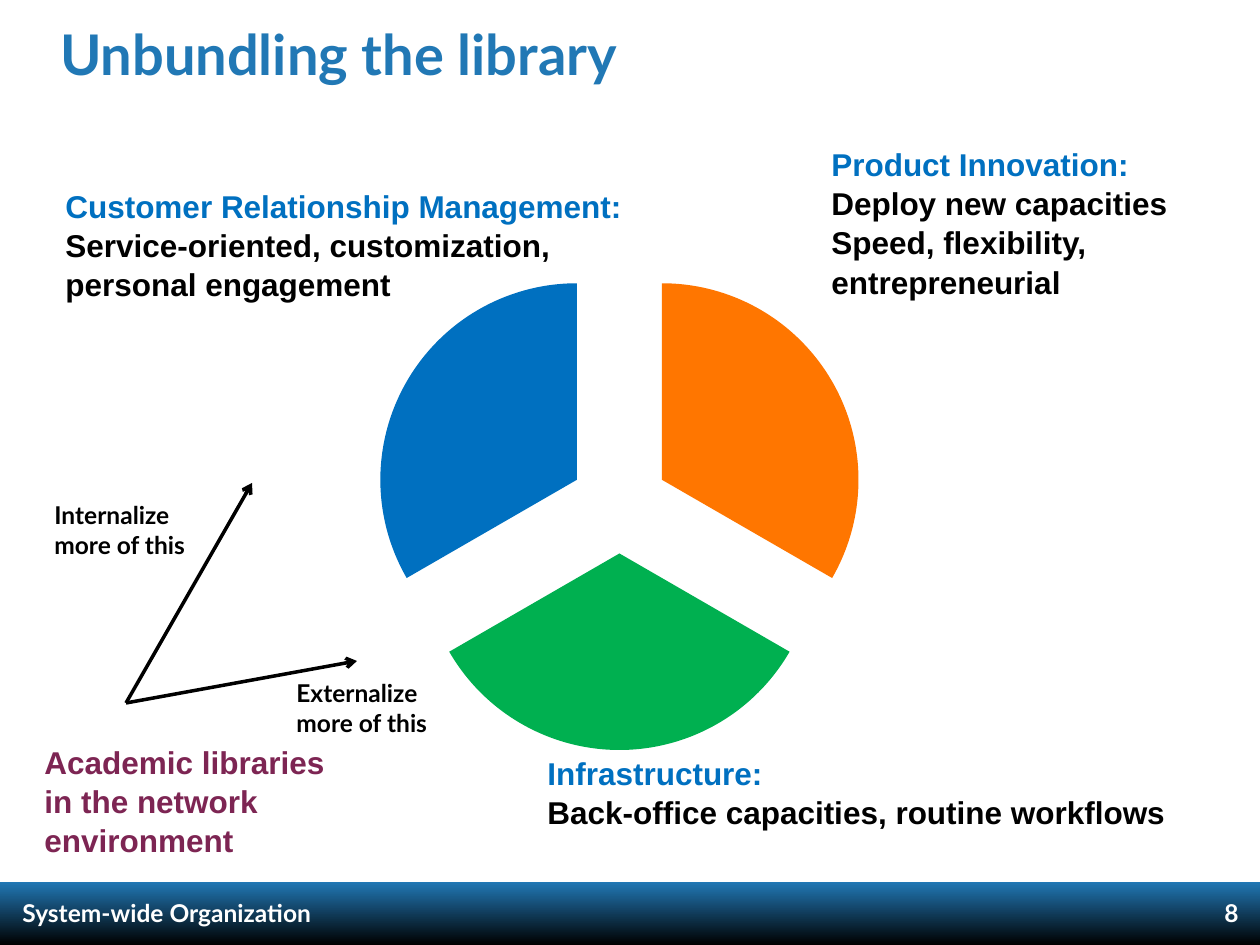
from lxml import etree
from pptx import Presentation
from pptx.chart.data import CategoryChartData
from pptx.dml.color import RGBColor
from pptx.enum.chart import XL_CHART_TYPE
from pptx.enum.shapes import MSO_CONNECTOR, MSO_SHAPE
from pptx.enum.text import PP_ALIGN
from pptx.oxml import parse_xml
from pptx.oxml.ns import nsdecls, qn
from pptx.util import Pt

PIE = XL_CHART_TYPE.PIE
STRAIGHT = MSO_CONNECTOR.STRAIGHT
RECTANGLE = MSO_SHAPE.RECTANGLE
LEFT, RIGHT = PP_ALIGN.LEFT, PP_ALIGN.RIGHT

EMU_PER_PX = 914400 / 126
BLANK_LAYOUT = 6
HEADING_FONT, LABEL_FONT = "Lato", "Arial"
TITLE_BLUE, BLUE, ORANGE, GREEN = "2178B5", "0070C0", "FF7600", "00B050"
PLUM, BLACK, WHITE = "7D2553", "000000", "FFFFFF"


def px(*lengths):
    return [round(length * EMU_PER_PX) for length in lengths]


def rgb(color):
    return RGBColor.from_string(color)


class SlideBuilder:
    """Holds the style and the slide being built."""

    def __init__(self, slide):
        self.slide = slide

    def text(self, box, lines, size, color, font=HEADING_FONT, first_color=None,
             align=LEFT, spacing=1.0, wrap=False, inset=True):
        frame = self.slide.shapes.add_textbox(*px(*box)).text_frame
        frame.word_wrap = wrap
        if not inset:
            frame.margin_left = frame.margin_top = 0
            frame.margin_right = frame.margin_bottom = 0
        for index, line in enumerate(lines):
            paragraph = frame.paragraphs[0] if index == 0 else frame.add_paragraph()
            paragraph.text = line
            paragraph.alignment = align
            paragraph.line_spacing = spacing
            paragraph.font.name = font
            paragraph.font.size = Pt(size)
            paragraph.font.bold = True
            is_heading = index == 0 and first_color
            paragraph.font.color.rgb = rgb(first_color if is_heading else color)

    def label(self, box, lines, color=BLACK, first_color=BLUE):
        self.text(box, lines, 18, color, LABEL_FONT, first_color, spacing=1.04)

    def gradient_band(self, box, colors):
        shape = self.slide.shapes.add_shape(RECTANGLE, *px(*box))
        shape.shadow.inherit = False
        shape.line.fill.background()
        shape.fill.gradient()
        shape.fill.gradient_angle = 270
        for stop, color in zip(shape.fill.gradient_stops, colors):
            stop.color.rgb = rgb(color)

    def arrow(self, start, end):
        connector = self.slide.shapes.add_connector(STRAIGHT, *px(*start, *end))
        connector.line.color.rgb = rgb(BLACK)
        connector.line.width = Pt(2)
        line = connector.line._get_or_add_ln()
        etree.SubElement(line, qn("a:tailEnd"), type="arrow")
        etree.SubElement(connector._element.spPr, qn("a:effectLst"))

    def exploded_pie(self, box, values, colors, explosion):
        data = CategoryChartData()
        data.categories = [str(number + 1) for number in range(len(values))]
        data.add_series("Series 1", values)
        chart = self.slide.shapes.add_chart(PIE, *px(*box), data).chart
        chart.has_legend = False
        chart.has_title = False
        chart.font.name = HEADING_FONT
        chart.font.size = Pt(10)
        chart.font.color.rgb = rgb(BLACK)
        plot = chart.plots[0]
        plot.vary_by_categories = False
        series = plot.series[0]
        for index, color in enumerate(colors):
            point_format = series.points[index].format
            point_format.fill.solid()
            point_format.fill.fore_color.rgb = rgb(color)
            point_format.line.fill.background()
        # Explosion stands before the data points in the series
        series._element.find(qn("c:dPt")).addprevious(
            parse_xml(f'<c:explosion {nsdecls("c")} val="{explosion}"/>'))
        # Centre the plot in its frame
        plot_area = chart._chartSpace.chart.plotArea
        for layout in plot_area.findall(qn("c:layout")):
            plot_area.remove(layout)
        plot_area.insert(0, parse_xml(
            f'<c:layout {nsdecls("c")}><c:manualLayout><c:layoutTarget val="inner"/>'
            '<c:xMode val="edge"/><c:yMode val="edge"/><c:x val="0.2"/><c:y val="0.03"/>'
            '<c:w val="0.6"/><c:h val="0.94"/></c:manualLayout></c:layout>'))


def main():
    presentation = Presentation()
    presentation.slide_width, presentation.slide_height = px(1260, 945)
    layout = presentation.slide_layouts[BLANK_LAYOUT]
    builder = SlideBuilder(presentation.slides.add_slide(layout))

    # Footer band
    builder.gradient_band((0, 882, 1260, 63), (TITLE_BLUE, BLACK))
    builder.text((10, 886, 714, 45), ["System-wide Organization"], 14, WHITE,
                 spacing=1.2, wrap=True)
    builder.text((1167, 886, 84, 45), ["8"], 14, WHITE, align=RIGHT,
                 spacing=1.2, wrap=True)

    # Title
    builder.text((60, 20, 1105, 137), ["Unbundling the library"], 32, TITLE_BLUE,
                 wrap=True, inset=False)

    # Three parts of the library
    builder.exploded_pie((210, 242, 819, 525), (33, 33, 33), (ORANGE, GREEN, BLUE), 25)
    builder.label((53, 179, 587, 127), ["Customer Relationship Management:",
                                        "Service-oriented, customization,",
                                        "personal engagement"])
    builder.label((819, 137, 364, 165), ["Product Innovation:", "Deploy new capacities",
                                         "Speed, flexibility,", "entrepreneurial"])
    builder.label((535, 746, 649, 89), ["Infrastructure:",
                                        "Back-office capacities, routine workflows"])

    # Directions for academic libraries
    builder.label((32, 735, 309, 127), ["Academic libraries", "in the network",
                                        "environment"], PLUM, PLUM)
    origin = (126, 703)
    for tip, box, verb in (((252, 483), (42, 494, 165, 72), "Internalize"),
                           ((357, 661), (284, 672, 168, 72), "Externalize")):
        builder.arrow(origin, tip)
        builder.text(box, [verb, "more of this"], 14, BLACK)

    presentation.save("out.pptx")


if __name__ == "__main__":
    main()
